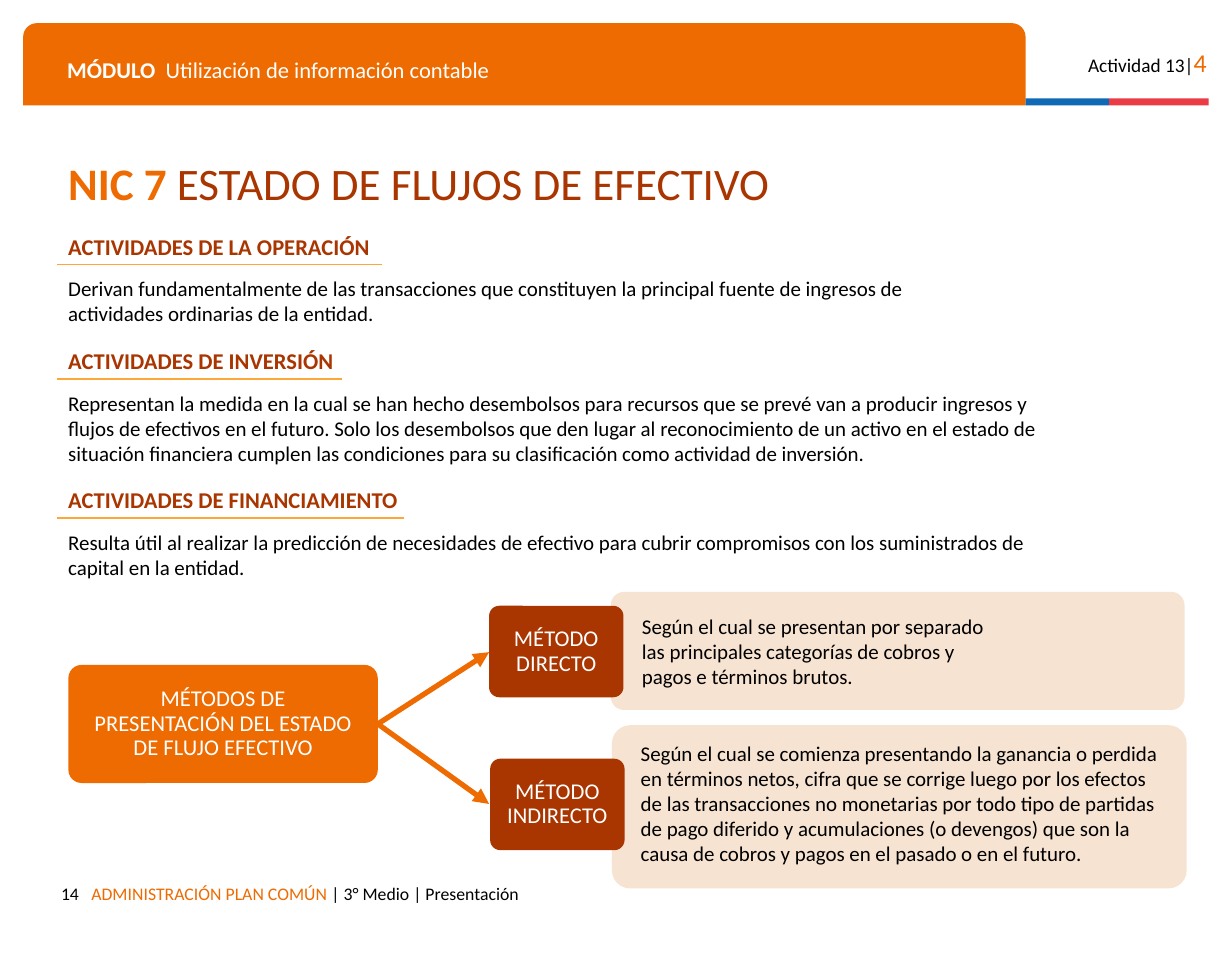
import pptx
import pptx.util
import pptx.dml.color
import pptx.enum.shapes
import pptx.enum.text
import pptx.oxml.ns
import lxml.etree

ORANGE, RUST, SAND, GOLD = "ED6B00", "A93501", "F7E3D1", "FDA739"
BLACK, WHITE, BLUE, RED = "000000", "FFFFFF", "0F69B4", "EB3C46"
LEFT, MID, RIGHT = (pptx.enum.text.PP_ALIGN.LEFT, pptx.enum.text.PP_ALIGN.CENTER,
                    pptx.enum.text.PP_ALIGN.RIGHT)
Kind = pptx.enum.shapes.MSO_SHAPE
Anchor = pptx.enum.text.MSO_ANCHOR
hue = pptx.dml.color.RGBColor.from_string

deck = pptx.Presentation()
deck.slide_width = pptx.util.Inches(10.63)
deck.slide_height = pptx.util.Inches(8.27)
slide = deck.slides.add_slide(deck.slide_layouts[6])
shapes = slide.shapes
col, row = deck.slide_width / 100, deck.slide_height / 100


def write(shape, lines, size, ink, bold=False, align=LEFT, space=None,
          pad=(0.1, 0.05), anchor=Anchor.TOP):
    """Fill a shape with lines, each a list of (text, own font values) runs."""
    frame = shape.text_frame
    frame.word_wrap = True
    frame.vertical_anchor = anchor
    frame.margin_left = frame.margin_right = pptx.util.Inches(pad[0])
    frame.margin_top = frame.margin_bottom = pptx.util.Inches(pad[1])
    for i, line in enumerate(lines):
        para = frame.add_paragraph() if i else frame.paragraphs[0]
        para.alignment = align
        if space:
            para.line_spacing = space
        para.font.name, para.font.size = "Calibri", pptx.util.Pt(size)
        para.font.bold, para.font.color.rgb = bold, hue(ink)
        for text, own in line:
            run = para.add_run()
            run.text = text
            if "size" in own:
                run.font.size = pptx.util.Pt(own["size"])
            if "ink" in own:
                run.font.color.rgb = hue(own["ink"])
            if "bold" in own:
                run.font.bold = own["bold"]


def link(start, end, ink, width, arrow=False):
    """Draw a line between two (column, row) points."""
    line = shapes.add_connector(
        pptx.enum.shapes.MSO_CONNECTOR.STRAIGHT,
        int(start[0] * col), int(start[1] * row), int(end[0] * col), int(end[1] * row))
    line.line.color.rgb = hue(ink)
    line.line.width = pptx.util.Pt(width)
    if arrow:
        tip = lxml.etree.SubElement(line.line._get_or_add_ln(), pptx.oxml.ns.qn("a:tailEnd"))
        tip.set("type", "triangle")
    lxml.etree.SubElement(line._element.spPr, pptx.oxml.ns.qn("a:effectLst"))


# Filled blocks: kind, corners, place, fill, centred lines, side padding
ROUND = Kind.ROUNDED_RECTANGLE
blocks = [
    (Kind.ROUND_2_SAME_RECTANGLE, [0.167, 0], (1.88, 2.42, 81.37, 8.59), ORANGE, [], 0.1),
    (Kind.RECTANGLE, [], (83.25, 10.28, 6.77, 0.73), BLUE, [], 0.1),
    (Kind.RECTANGLE, [], (90.03, 10.28, 8.09, 0.73), RED, [], 0.1),
    (ROUND, [0.112], (49.58, 61.79, 46.57, 12.33), SAND, [], 0.1),
    (ROUND, [0.112], (39.7, 63.24, 10.91, 9.55), RUST, ["MÉTODO", "DIRECTO"], 0.07),
    (ROUND, [0.112], (5.55, 69.41, 25.12, 12.33), ORANGE,
     ["MÉTODOS DE PRESENTACIÓN DEL ESTADO DE FLUJO EFECTIVO"], 0.14),
    (ROUND, [0.112], (49.67, 75.7, 46.66, 17.05), SAND, [], 0.1),
    (ROUND, [0.112], (39.79, 79.2, 10.91, 9.55), RUST, ["MÉTODO", "INDIRECTO"], 0.07),
]
for kind, bends, (x, y, w, h), fill, lines, side in blocks:
    block = shapes.add_shape(kind, int(x * col), int(y * row), int(w * col), int(h * row))
    block.shadow.inherit = False
    block.fill.solid()
    block.fill.fore_color.rgb = hue(fill)
    block.line.fill.background()
    for i, bend in enumerate(bends):
        block.adjustments[i] = bend
    if lines:
        write(block, [[(line, {})] for line in lines], 14, WHITE, align=MID,
              space=0.9, pad=(side, 0.05), anchor=Anchor.MIDDLE)

# Text: place, runs, size, colour, further options
EDGE = 4.61
wide = {"pad": (0.1, 0.1)}
texts = [
    ((6.49, 91.05, 67.2, 4.59), [("ADMINISTRACIÓN PLAN COMÚN ", {"ink": ORANGE}),
                                 ("| 3° Medio | Presentación", {})], 11, BLACK, wide),
    ((1.88, 91.05, 5.46, 3.5), [("14", {})], 11, BLACK, {"align": RIGHT, **wide}),
    ((86.83, 3.63, 12.04, 4.59), [("Actividad 13|", {}), ("4", {"size": 16, "ink": ORANGE})],
     12, BLACK, {"align": RIGHT, **wide}),
    ((4.52, 4.59, 76.58, 4.23), [("MÓDULO ", {"bold": True}),
                                 (" Utilización de información contable", {})], 14, WHITE, wide),
    ((EDGE, 17.41, 63.22, 4.23), [("NIC 7 ", {"ink": ORANGE, "bold": True}),
                                  ("ESTADO DE FLUJOS DE EFECTIVO", {})], 28, RUST,
     {"space": 0.8, "anchor": Anchor.MIDDLE, **wide}),
    ((51.18, 63.48, 30.29, 9.19),
     [("Según el cual se presentan por separado las principales categorías de cobros y pagos "
       "e términos brutos.", {})], 13, BLACK, {}),
    ((51.08, 76.66, 44.59, 14.39),
     [("Según el cual se comienza presentando la ganancia o perdida en términos netos, cifra "
       "que se corrige luego por los efectos de las transacciones no monetarias por todo tipo "
       "de partidas de pago diferido y acumulaciones (o devengos) que son la causa de cobros y "
       "pagos en el pasado o en el futuro.", {})], 13, BLACK, {}),
]

# Sections: heading row, heading width, rule width, body width and height, heading, body
parts = [
    (23.7, 29.73, 26.43, 74.98, 6.53, "ACTIVIDADES DE LA OPERACIÓN",
     "Derivan fundamentalmente de las transacciones que constituyen la principal fuente de "
     "ingresos de actividades ordinarias de la entidad."),
    (35.67, 25.21, 23.14, 81.37, 9.19, "ACTIVIDADES DE INVERSIÓN",
     "Representan la medida en la cual se han hecho desembolsos para recursos que se prevé van "
     "a producir ingresos y flujos de efectivos en el futuro. Solo los desembolsos que den lugar "
     "al reconocimiento de un activo en el estado de situación financiera cumplen las "
     "condiciones para su clasificación como actividad de inversión."),
    (50.18, 31.51, 28.22, 79.87, 6.53, "ACTIVIDADES DE FINANCIAMIENTO",
     "Resulta útil al realizar la predicción de necesidades de efectivo para cubrir compromisos "
     "con los suministrados de capital en la entidad."),
]
for top, head, rule, body, high, title, text in parts:
    texts.append(((EDGE, top, head, 4.11), [(title, {})], 14, RUST, {"bold": True}))
    texts.append(((EDGE, top + 4.47, body, high), [(text, {})], 13, BLACK, {}))
    link((EDGE, top + 3.9), (EDGE + rule, top + 3.9), GOLD, 0.75)

for (x, y, w, h), runs, size, ink, more in texts:
    box = shapes.add_textbox(int(x * col), int(y * row), int(w * col), int(h * row))
    write(box, [runs], size, ink, **more)

for end in (68.08, 83.92):
    link((30.67, 75.57), (39.7, end), ORANGE, 3.25, arrow=True)

deck.save("out.pptx")
